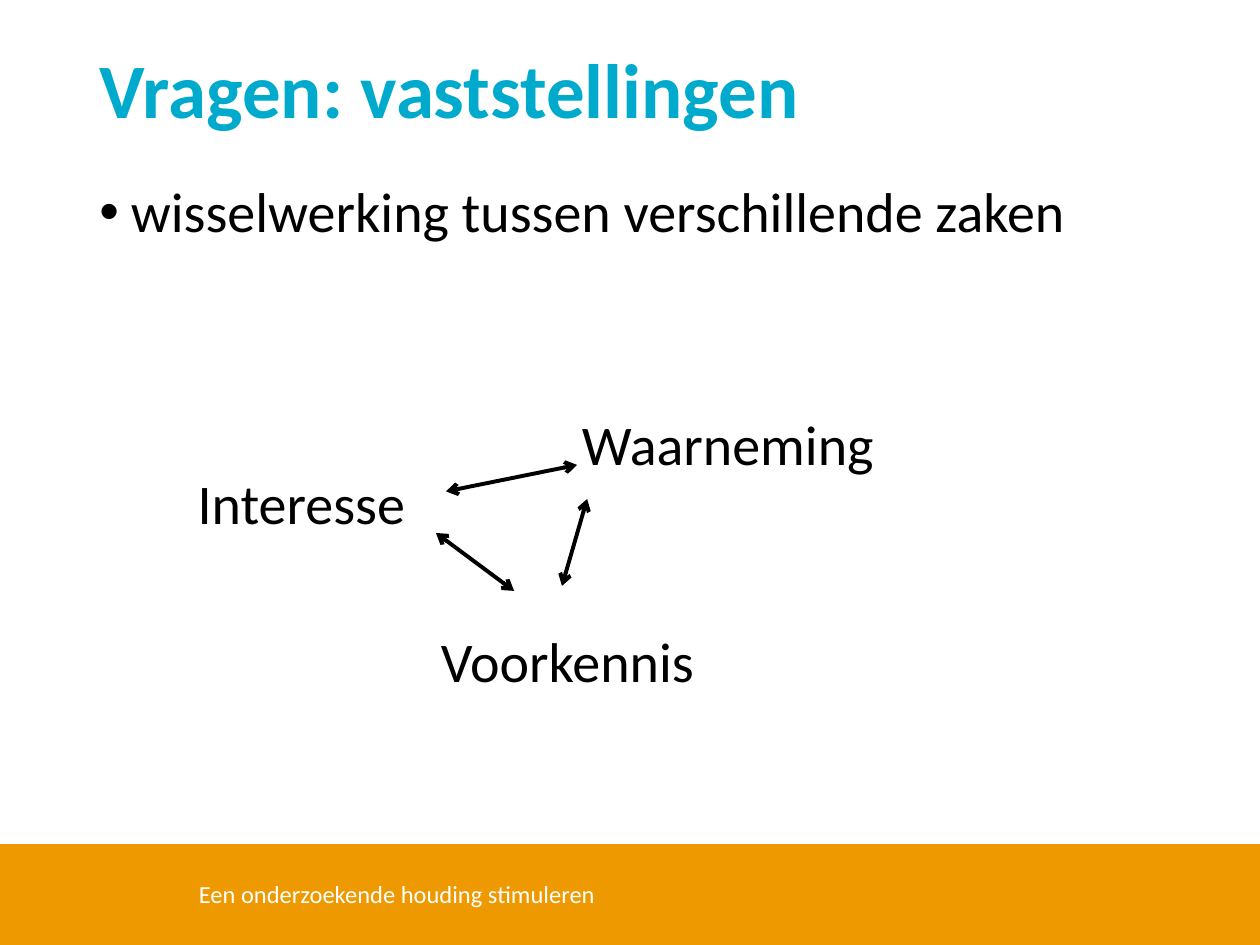
from lxml import etree
from pptx import Presentation
from pptx.dml.color import RGBColor
from pptx.enum.shapes import MSO_CONNECTOR, MSO_SHAPE
from pptx.enum.text import MSO_ANCHOR
from pptx.oxml.ns import qn
from pptx.util import Inches, Pt

ORANGE, TEAL, BLACK, WHITE = "EE9900", "00AACC", "000000", "FFFFFF"


def color(hex_string):
    return RGBColor.from_string(hex_string)


def add_bullet(paragraph, indent):
    properties = paragraph._p.get_or_add_pPr()
    properties.set("marL", str(Inches(indent)))
    properties.set("indent", str(-Inches(indent)))
    etree.SubElement(properties, qn("a:buFont")).set("typeface", "Arial")
    etree.SubElement(properties, qn("a:buChar")).set("char", "•")


def add_text(slide, text, box, size=32, fill=BLACK, bold=False,
             anchor=MSO_ANCHOR.TOP, spacing=None, bullet_indent=None):
    frame = slide.shapes.add_textbox(*map(Inches, box)).text_frame
    frame.word_wrap = True
    frame.vertical_anchor = anchor
    paragraph = frame.paragraphs[0]
    paragraph.text = text
    if bullet_indent:
        add_bullet(paragraph, bullet_indent)
    if spacing:
        paragraph.line_spacing = spacing
    font = paragraph.runs[0].font
    font.name, font.size, font.bold = "Calibri", Pt(size), bold
    font.color.rgb = color(fill)


def add_double_arrow(slide, start, end):
    arrow = slide.shapes.add_connector(
        MSO_CONNECTOR.STRAIGHT, *map(Inches, (*start, *end)))
    arrow.line.color.rgb = color(BLACK)
    arrow.line.width = Pt(2.25)
    outline = arrow.line._get_or_add_ln()
    for tip in ("a:headEnd", "a:tailEnd"):
        etree.SubElement(outline, qn(tip)).set("type", "arrow")
    etree.SubElement(arrow._element.spPr, qn("a:effectLst"))


def add_footer(slide, left, top, width, height):
    band = slide.shapes.add_shape(
        MSO_SHAPE.RECTANGLE, *map(Inches, (left, top, width, height)))
    band.shadow.inherit = False
    band.fill.solid()
    band.fill.fore_color.rgb = color(ORANGE)
    band.line.fill.background()
    add_text(slide, "Een onderzoekende houding stimuleren",
             (left + 1.48, top + 0.23, 5.91, height - 0.23), size=14, fill=WHITE)


def add_heading(slide, left, top, width):
    add_text(slide, "Vragen: vaststellingen", (left, top, width, 1.45), size=44,
             fill=TEAL, bold=True, anchor=MSO_ANCHOR.MIDDLE, spacing=0.9)
    add_text(slide, "wisselwerking tussen verschillende zaken",
             (left, top + 1.39, width, 4.95), spacing=0.9, bullet_indent=0.25)


def add_interaction(slide, left, top):
    """Three concepts that influence each other, joined by double arrows."""
    concepts = {"Waarneming": (3.05, 0), "Interesse": (0, 0.47),
                "Voorkennis": (1.93, 1.72)}
    for concept, (x, y) in concepts.items():
        add_text(slide, concept, (left + x, top + y, 2.96, 0.64))

    arrows = [((1.99, 1.03), (2.61, 1.49)),  # Interesse - Voorkennis
              ((2.07, 0.7), (3.11, 0.49)),   # Interesse - Waarneming
              ((2.99, 1.45), (3.19, 0.76))]  # Voorkennis - Waarneming
    for ends in arrows:
        add_double_arrow(slide, *[(left + x, top + y) for x, y in ends])


def main():
    deck = Presentation()
    deck.slide_width, deck.slide_height = Inches(10), Inches(7.5)
    slide = deck.slides.add_slide(deck.slide_layouts[6])
    add_footer(slide, 0, 6.7, 10, 0.8)
    add_heading(slide, 0.69, 0.02, 8.62)
    add_interaction(slide, 1.47, 3.2)
    deck.save("out.pptx")


if __name__ == "__main__":
    main()
